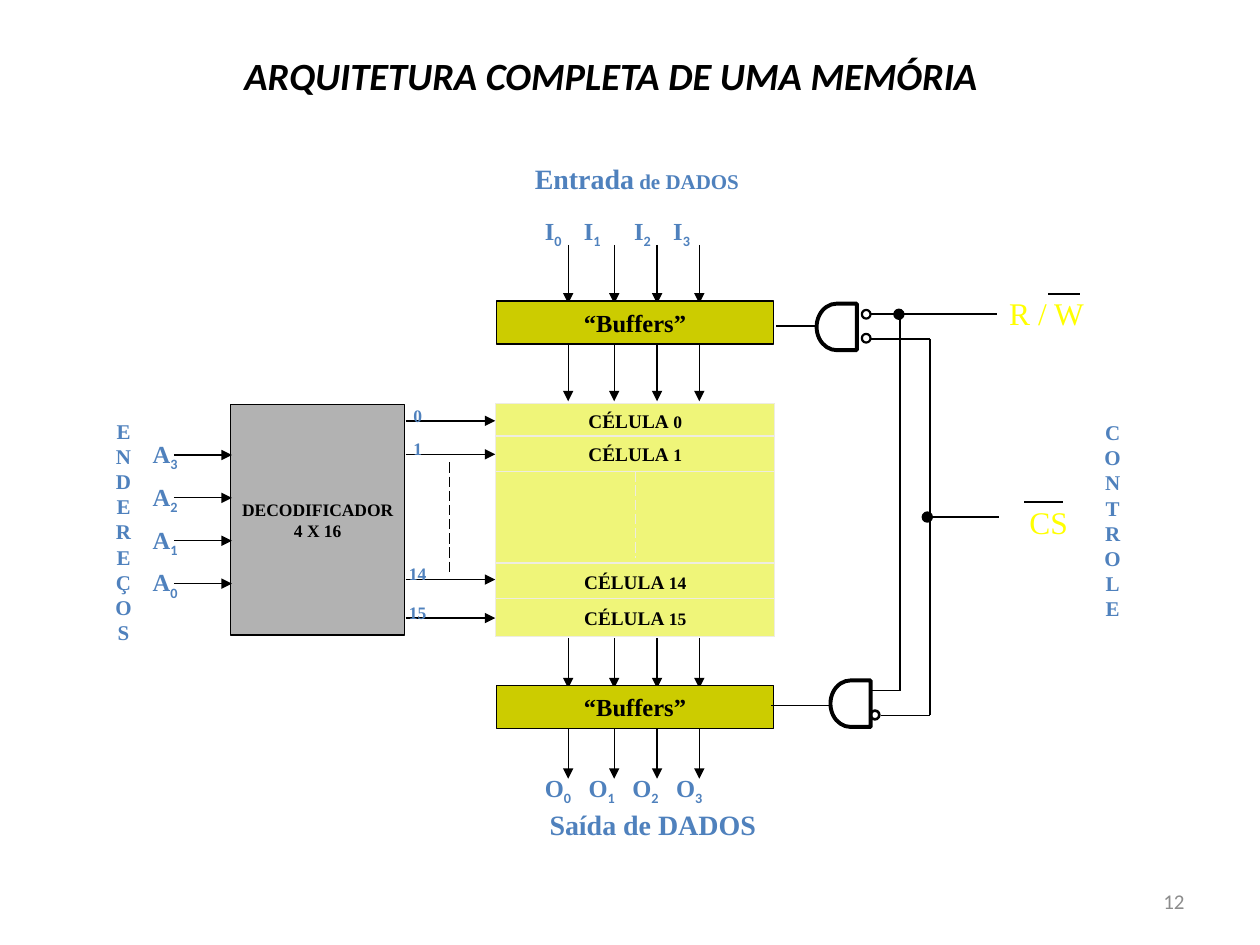
import pptx
import pptx.dml.color
import pptx.enum.dml
import pptx.enum.shapes
import pptx.enum.text
import pptx.oxml
import pptx.oxml.ns
import pptx.util

Pt = pptx.util.Pt
color = pptx.dml.color.RGBColor.from_string
SHAPE = pptx.enum.shapes.MSO_SHAPE
ALIGN = pptx.enum.text.PP_ALIGN
ANCHOR = pptx.enum.text.MSO_ANCHOR
BLACK, BLUE, GRAY, YELLOW = "000000", "4F81BD", "8C8C8C", "FFFF00"
PALE, OLIVE, RULE = "EFF579", "CCCC00", "EEECE1"
SERIF, SANS = "Times New Roman", "Calibri"

deck = pptx.Presentation()
deck.slide_width, deck.slide_height = Pt(720), Pt(540)
slide = deck.slides.add_slide(deck.slide_layouts[6])


def box(left, top, width, height, paragraphs=(), ink=BLACK, kind=None, fill=None,
        line=0, align=ALIGN.CENTER, anchor=ANCHOR.MIDDLE, inset=(0, 0), wrap=True,
        bold=True, italic=False):
    """Shape, or text box if kind is None; a run is (text, size, font, subscript)."""
    frame = tuple(Pt(v) for v in (left, top, width, height))
    if kind is None:
        part = slide.shapes.add_textbox(*frame)
    else:
        part = slide.shapes.add_shape(kind, *frame)
        part.shadow.inherit = False
        if fill:
            part.fill.solid()
            part.fill.fore_color.rgb = color(fill)
        else:
            part.fill.background()
        if line:
            part.line.color.rgb = color(BLACK)
            part.line.width = Pt(line)
        else:
            part.line.fill.background()
    text = part.text_frame
    text.word_wrap = wrap
    text.vertical_anchor = anchor
    text.margin_left = text.margin_right = Pt(inset[0])
    text.margin_top = text.margin_bottom = Pt(inset[1])
    for i, runs in enumerate(paragraphs):
        paragraph = text.add_paragraph() if i else text.paragraphs[0]
        paragraph.alignment = align
        for words, size, font, subscript in runs:
            run = paragraph.add_run()
            run.text = words
            run.font.size, run.font.name = Pt(size), font
            run.font.bold, run.font.italic = bold, italic
            run.font.color.rgb = color(ink)
            if subscript:
                run.font._element.set("baseline", "-25000")
    return part


def wire(x1, y1, x2, y2, ink=BLACK, width=0.75, arrow=False, dashed=False):
    part = slide.shapes.add_connector(
        pptx.enum.shapes.MSO_CONNECTOR.STRAIGHT, Pt(x1), Pt(y1), Pt(x2), Pt(y2))
    part.line.color.rgb = color(ink)
    part.line.width = Pt(width)
    if dashed:
        part.line.dash_style = pptx.enum.dml.MSO_LINE.LONG_DASH
    if arrow:
        head = pptx.oxml.parse_xml(
            '<a:tailEnd %s type="triangle"/>' % pptx.oxml.ns.nsdecls("a"))
        part.line._get_or_add_ln().append(head)
    part._element.spPr.append(
        pptx.oxml.parse_xml("<a:effectLst %s/>" % pptx.oxml.ns.nsdecls("a")))


# Title and page number
box(25.2, 20.2, 648, 45.4, [[("ARQUITETURA COMPLETA DE UMA MEMÓRIA", 22, SANS, False)]],
    italic=True, inset=(7.2, 3.6))
box(516.2, 500.4, 167.8, 28.8, [[("12", 12, SANS, False)]], GRAY,
    align=ALIGN.RIGHT, inset=(7.2, 3.6), bold=False)

# Data lines through the buffers and the cells
for top, bottom in ((140, 173.5), (196, 229.3), (364.5, 393.3), (416.3, 445)):
    for x in (324.7, 351, 375.5, 399.6):
        wire(x, top, x, bottom, arrow=True)

# Decoder
box(131.8, 231.1, 99.4, 131.8,
    [[("DECODIFICADOR", 10, SERIF, False)], [("4 X 16", 10, SERIF, False)]],
    kind=SHAPE.RECTANGLE, fill="B2B2B2", line=0.75, inset=(7.2, 3.6), wrap=False)

# Memory cells
memory = box(283, 230.4, 159.8, 133.2, kind=SHAPE.RECTANGLE, fill=PALE, line=0.75)
memory.line.color.rgb = color(RULE)
for number, top in (("0", 230.9), ("1", 249.8), ("14", 322.8), ("15", 343.4)):
    box(325, top, 76, 19.2,
        [[("CÉLULA", 11, SERIF, False), (" " + number, 10, SERIF, False)]],
        kind=SHAPE.RECTANGLE, fill=PALE, wrap=False)
for y in (249.1, 269.3, 321.8, 342):
    wire(283, y, 442.8, y, RULE)
wire(363, 269.3, 363, 319, RULE, dashed=True)

# Address inputs A3 to A0
for i in range(4):
    y = 260 + 24.5 * i
    box(82.8, y - 8, 23, 16.6,
        [[("A", 14, SERIF, False), (str(3 - i), 14, SANS, True)]], BLUE)
    wire(99.4, y, 132.5, y, arrow=True)

# Data inputs and outputs
for i, left in enumerate((304.6, 326.9, 355.7, 378)):
    box(left, 125.3, 23, 15.1,
        [[("I", 14, SERIF, False), (str(i), 14, SANS, True)]], BLUE, wrap=False)
    box(311 + 25 * i, 442.8, 15.8, 16.6,
        [[("O", 14, SERIF, False), (str(i), 14, SANS, True)]], BLUE, wrap=False)

# Decoder outputs
for number, y in (("0", 240.5), ("1", 259.6), ("14", 331.2), ("15", 353.2)):
    wire(231.8, y, 283, y, arrow=True)
    box(228.2, y - 9.4, 20.9, 12.2, [[(number, 10, SERIF, False)]], BLUE)
wire(257, 264.2, 257, 327.6, dashed=True)

# Group headings
for word, left, top, height in (("ENDEREÇOS", 56.9, 235.4, 136.8),
                                ("CONTROLE", 622.1, 236.2, 122.4)):
    box(left, top, 27.4, height, [[(letter, 12, SERIF, False)] for letter in word],
        BLUE, anchor=ANCHOR.TOP, inset=(7.2, 3.6))
box(287.3, 88.6, 153.4, 26.6,
    [[("Entrada", 16, SERIF, False), (" de DADOS", 12, SERIF, False)]],
    BLUE, anchor=ANCHOR.TOP, inset=(7.2, 3.6))
box(305.3, 457.9, 135.4, 26.6, [[("Saída de DADOS", 16, SERIF, False)]],
    BLUE, anchor=ANCHOR.TOP, inset=(7.2, 3.6))

# Buffers
for top in (172.1, 391.7):
    box(283.7, top, 158.4, 24.5, [[("“Buffers”", 14, SERIF, False)]],
        kind=SHAPE.RECTANGLE, fill=OLIVE, line=0.75)

# Control gates, inverting inputs and junctions
for left, top in ((466.6, 173.5), (474.5, 388.8)):
    gate = box(left, top, 23, 26.6, kind=SHAPE.FLOWCHART_DELAY, line=2.25)
    gate.rotation = 180
for left, top, fill, line in ((492.5, 177.1, None, 1.25), (492.5, 190.8, None, 1.25),
                              (497.5, 406.1, None, 1.5), (511.2, 177.1, BLACK, 1.5),
                              (527.4, 293, BLACK, 1.5)):
    box(left, top, 5, 5, kind=SHAPE.OVAL, fill=fill, line=line)

# Control wiring
for ends in ((497.5, 179.4, 570, 179.4), (497.5, 193.6, 531.4, 193.6),
             (531.4, 193.6, 531.4, 408.5), (503.3, 408.8, 531.4, 408.8),
             (514.1, 179.4, 514.1, 394.6), (514.1, 394.6, 497.5, 394.6),
             (474.5, 403.2, 440.6, 403.2), (465.8, 186.2, 443.5, 186.2),
             (531.4, 295.3, 571, 295.3)):
    wire(*ends, width=1)

# Control signals with their negation bars
for signal, left, top, width, bar_left, bar_right, bar_y, bar_width in (
        ("CS", 588.2, 287.3, 22.3, 585.4, 607.7, 286.8, 1.5),
        ("R / W", 576.7, 167.8, 43.2, 599, 617, 168, 1)):
    box(left, top, width, 21.6, [[(signal, 18, SERIF, False)]], YELLOW,
        align=ALIGN.LEFT, anchor=ANCHOR.TOP, wrap=False, bold=False)
    wire(bar_left, bar_y, bar_right, bar_y, width=bar_width)

deck.save("out.pptx")
